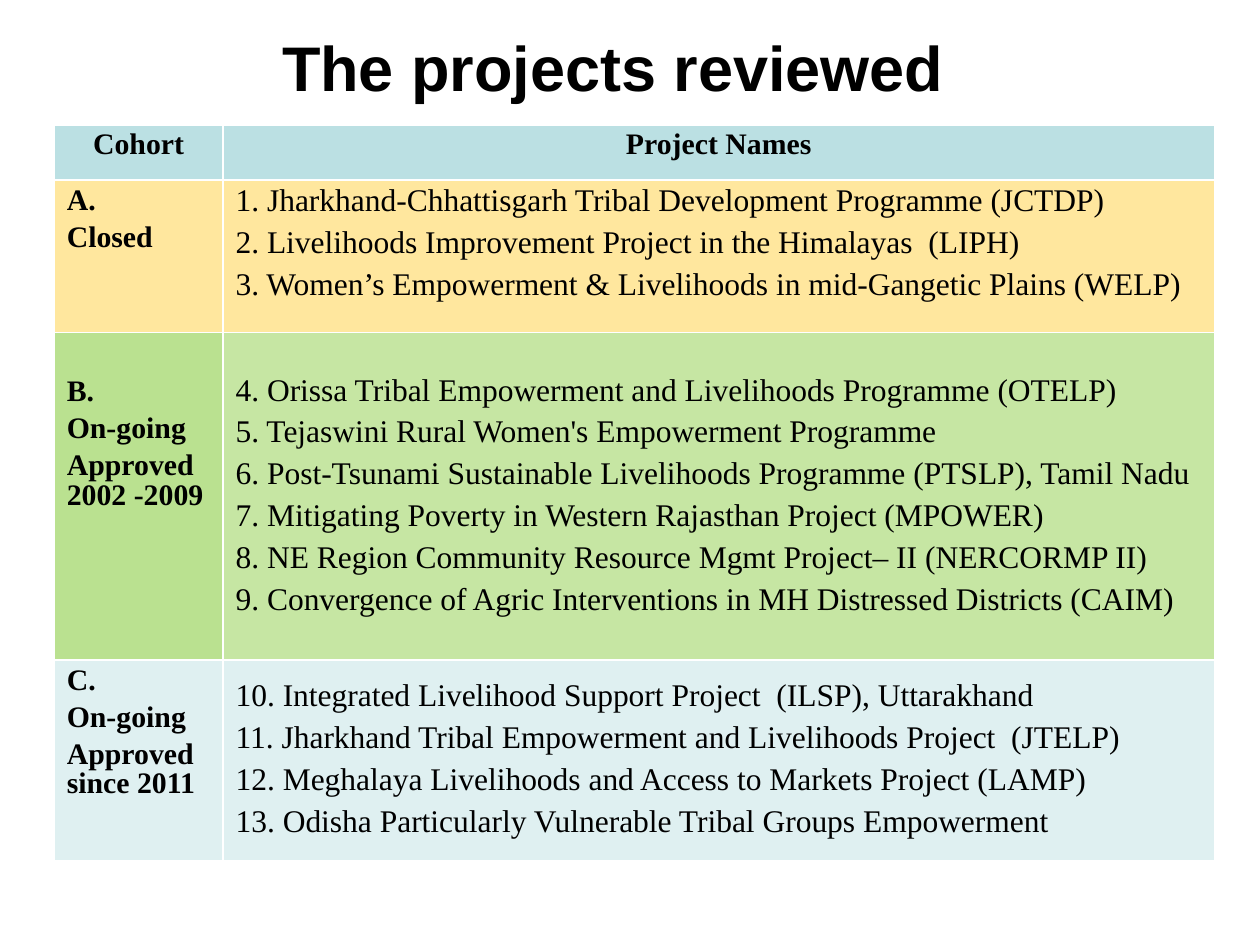
from lxml import etree
from pptx import Presentation
from pptx import util as u
from pptx.dml.color import RGBColor
from pptx.enum import text
from pptx.oxml.ns import qn

BLACK = RGBColor(0x00, 0x00, 0x00)
PALE = RGBColor(0xBB, 0xE0, 0xE3)
GOLD = RGBColor(0xFF, 0xC0, 0x00)
GREEN = RGBColor(0x92, 0xD0, 0x50)
TEAL = RGBColor(0x9E, 0xD3, 0xD7)
MID, TOP = text.MSO_ANCHOR.MIDDLE, text.MSO_ANCHOR.TOP
LEFT, CENTER = text.PP_ALIGN.LEFT, text.PP_ALIGN.CENTER


def write(frame, lines, size=17, bold=True, face="Times New Roman",
          align=LEFT, after=4, space=0.9):
    """Fill a text frame, one paragraph for each line."""
    frame.word_wrap = True
    for i, line in enumerate(lines):
        para = frame.add_paragraph() if i else frame.paragraphs[0]
        para.alignment = align
        para.line_spacing = space
        para.space_before = u.Pt(0)
        para.space_after = u.Pt(after)
        run = para.add_run()
        run.text = line
        run.font.name = face
        run.font.size = u.Pt(size)
        run.font.bold = bold
        run.font.color.rgb = BLACK


def paint(cell, color, alpha=100):
    """Give a cell a solid fill, alpha in percent."""
    cell.fill.solid()
    cell.fill.fore_color.rgb = color
    if alpha < 100:
        tone = cell._tc.tcPr.find(".//" + qn("a:srgbClr"))
        etree.SubElement(tone, qn("a:alpha"), val=str(alpha * 1000))


# Slide
prs = Presentation()
prs.slide_width, prs.slide_height = u.Inches(10), u.Inches(7.5)
slide = prs.slides.add_slide(prs.slide_layouts[5])

# Title
title = slide.shapes.title
title.left, title.top = u.Inches(1.14), u.Inches(0.21)
title.width, title.height = u.Inches(7.45), u.Inches(0.63)
title.text_frame.vertical_anchor = MID
write(title.text_frame, ["The projects reviewed"], size=36, face="Arial",
      align=CENTER, after=0, space=1)

# Table grid
cols = [1.34, 7.87]
rows = [0.44, 1.21, 2.6, 1.59]
grid = slide.shapes.add_table(
    len(rows), len(cols), u.Inches(0.43), u.Inches(0.99),
    u.Inches(sum(cols)), u.Inches(sum(rows))).table
for col, wide in zip(grid.columns, cols):
    col.width = u.Inches(wide)
for row, high in zip(grid.rows, rows):
    row.height = u.Inches(high)

# Header row
for cell, head in zip(grid.rows[0].cells, ["Cohort", "Project Names"]):
    paint(cell, PALE)
    write(cell.text_frame, [head], align=CENTER)

# Cohorts: label, projects, colour, alpha of both cells, label inset, anchor
cohorts = [
    (["A.", "Closed"],
     ["1. Jharkhand-Chhattisgarh Tribal Development Programme (JCTDP)",
      "2. Livelihoods Improvement Project in the Himalayas  (LIPH)",
      "3. Women’s Empowerment & Livelihoods in mid-Gangetic Plains (WELP)"],
     GOLD, (38, 38), 0.05, TOP),
    (["B.", "On-going", "Approved  2002 -2009"],
     ["4. Orissa Tribal Empowerment and Livelihoods Programme (OTELP)",
      "5. Tejaswini Rural Women's Empowerment Programme",
      "6. Post-Tsunami Sustainable Livelihoods Programme (PTSLP), Tamil Nadu",
      "7. Mitigating Poverty in Western Rajasthan Project (MPOWER)",
      "8. NE Region Community Resource Mgmt Project– II (NERCORMP II)",
      "9. Convergence of Agric Interventions in MH Distressed Districts (CAIM)"],
     GREEN, (63, 52), 0.36, MID),
    (["C.", "On-going", "Approved since 2011"],
     ["10. Integrated Livelihood Support Project  (ILSP), Uttarakhand",
      "11. Jharkhand Tribal Empowerment and Livelihoods Project  (JTELP)",
      "12. Meghalaya Livelihoods and Access to Markets Project (LAMP)",
      "13. Odisha Particularly Vulnerable Tribal Groups Empowerment"],
     TEAL, (33, 33), 0.05, MID),
]
for i, (label, names, color, alphas, inset, anchor) in enumerate(cohorts, 1):
    tag, body = grid.cell(i, 0), grid.cell(i, 1)
    for cell, alpha in zip((tag, body), alphas):
        paint(cell, color, alpha)
    tag.margin_top = u.Inches(inset)
    body.vertical_anchor = anchor
    write(tag.text_frame, label)
    write(body.text_frame, names, size=18, bold=False, after=6)

prs.save("out.pptx")
